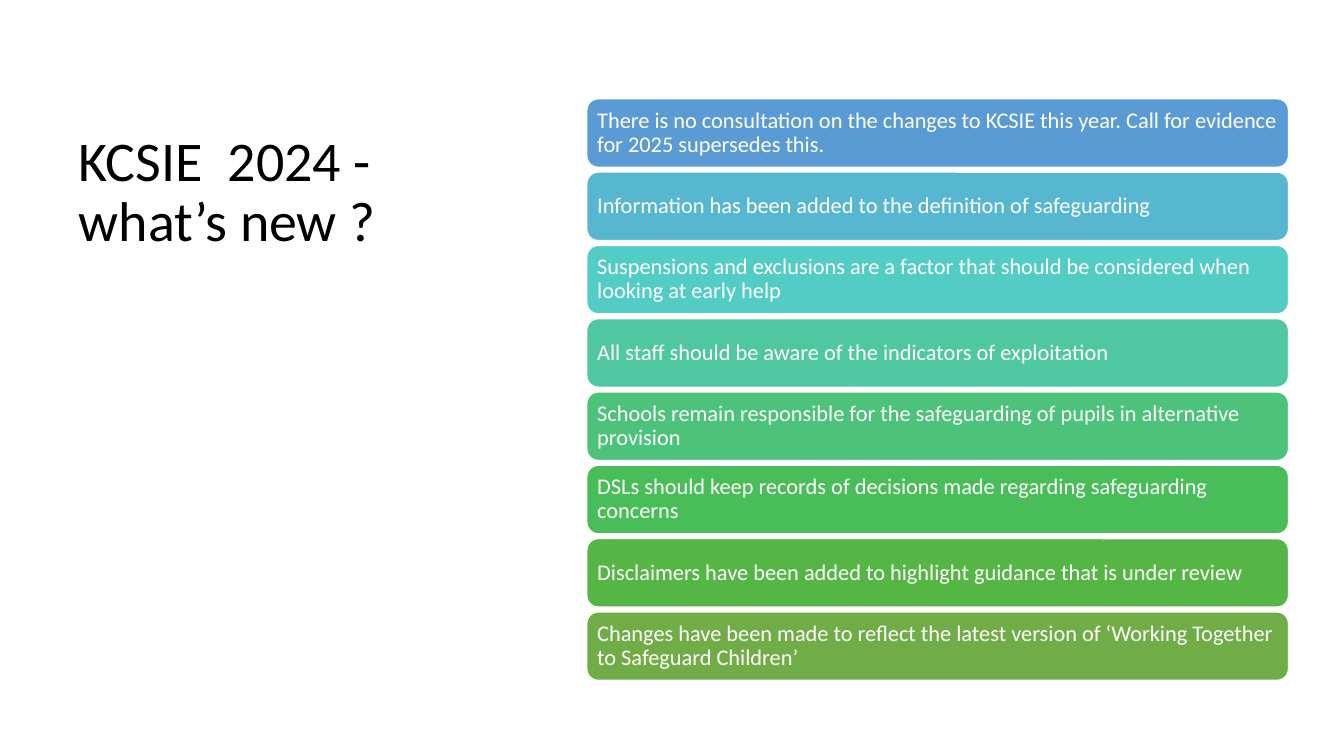
from dataclasses import dataclass

from pptx import Presentation
from pptx.dml.color import RGBColor
from pptx.enum.shapes import MSO_SHAPE
from pptx.enum.text import MSO_ANCHOR, MSO_AUTO_SIZE, PP_ALIGN
from pptx.util import Inches, Pt

ROUNDED = MSO_SHAPE.ROUNDED_RECTANGLE
TOP, MIDDLE = MSO_ANCHOR.TOP, MSO_ANCHOR.MIDDLE
LEFT = PP_ALIGN.LEFT
NO_AUTOFIT = MSO_AUTO_SIZE.NONE


@dataclass(frozen=True)
class Theme:
    font: str = "Calibri"
    title_size: int = 40
    change_size: int = 16
    black: str = "000000"
    white: str = "FFFFFF"


THEME = Theme()


def write(frame, text, size, color, anchor):
    frame.text = text
    frame.word_wrap = True
    frame.auto_size = NO_AUTOFIT
    frame.vertical_anchor = anchor
    paragraph = frame.paragraphs[0]
    paragraph.alignment = LEFT
    paragraph.line_spacing = 0.9
    font = paragraph.runs[0].font
    font.name = THEME.font
    font.size = Pt(size)
    font.color.rgb = RGBColor.from_string(color)


changes = [
    ("There is no consultation on the changes to KCSIE this year. Call for evidence for 2025 supersedes this.", "5B9BD5"),
    ("Information has been added to the definition of safeguarding", "57B7D1"),
    ("Suspensions and exclusions are a factor that should be considered when looking at early help", "53CCC5"),
    ("All staff should be aware of the indicators of exploitation", "4FC7A0"),
    ("Schools remain responsible for the safeguarding of pupils in alternative provision", "4CC27B"),
    ("DSLs should keep records of decisions made regarding safeguarding concerns", "48BD58"),
    ("Disclaimers have been added to highlight guidance that is under review", "55B646"),
    ("Changes have been made to reflect the latest version of ‘Working Together to Safeguard Children’", "70AD47"),
]

deck = Presentation()
deck.slide_width, deck.slide_height = Inches(13.33), Inches(7.5)
slide = deck.slides.add_slide(deck.slide_layouts[5])

headline = slide.shapes.title
headline.left, headline.top = Inches(0.68), Inches(1.27)
headline.width, headline.height = Inches(3.94), Inches(4.95)
write(headline.text_frame, "KCSIE  2024 -  what’s new ?", THEME.title_size, THEME.black, TOP)

first_top, last_top = 0.98, 6.07
pitch = (last_top - first_top) / (len(changes) - 1)

for row, (wording, fill) in enumerate(changes):
    change = slide.shapes.add_shape(
        ROUNDED, Inches(5.82), Inches(first_top + row * pitch), Inches(6.96), Inches(0.68)
    )
    change.shadow.inherit = False
    change.fill.solid()
    change.fill.fore_color.rgb = RGBColor.from_string(fill)
    change.line.color.rgb = RGBColor.from_string(THEME.white)
    change.line.width = Pt(1)
    frame = change.text_frame
    frame.margin_left = frame.margin_right = Inches(0.07)
    frame.margin_top = frame.margin_bottom = Inches(0.07)
    write(frame, wording, THEME.change_size, THEME.white, MIDDLE)

deck.save("out.pptx")
